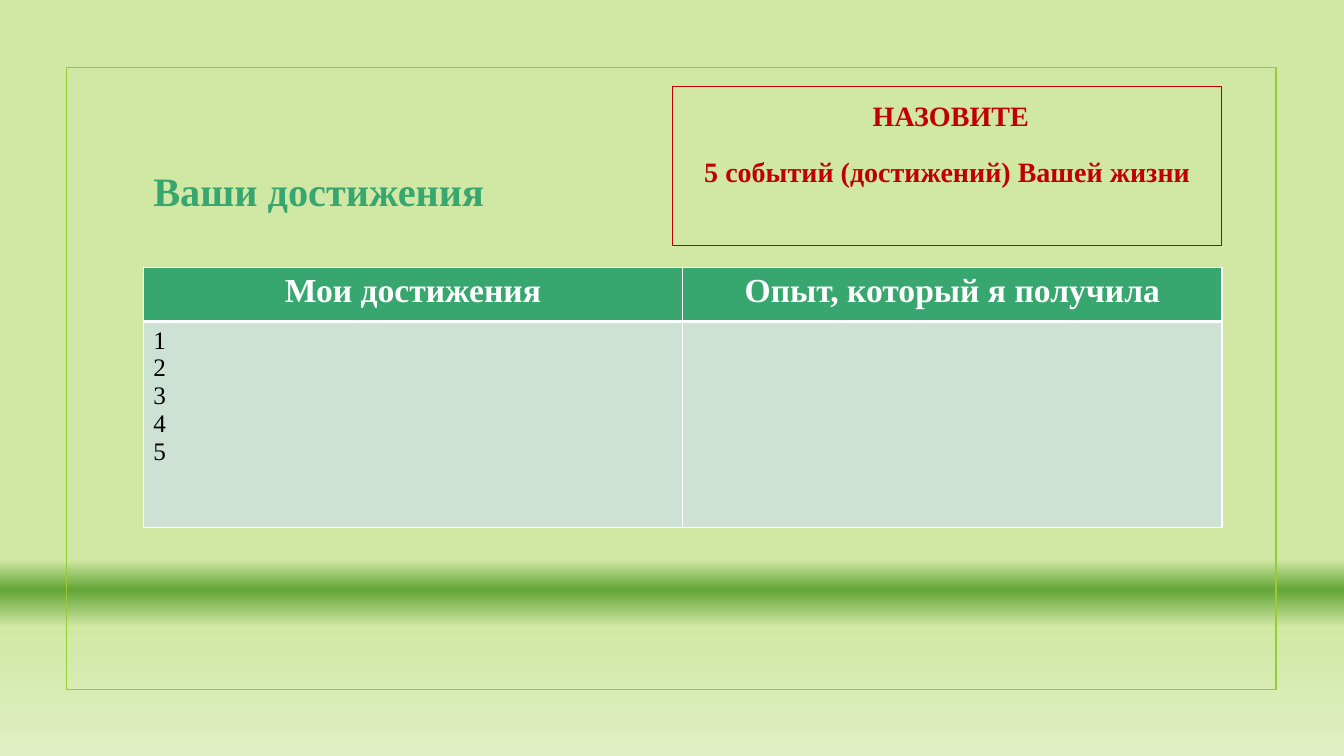
from lxml.etree import SubElement
from pptx import Presentation
from pptx.dml.color import RGBColor
from pptx.enum.shapes import MSO_SHAPE as Shape
from pptx.enum.text import MSO_ANCHOR as Anchor, MSO_AUTO_SIZE as AutoSize, PP_ALIGN as Align
from pptx.oxml.ns import qn
from pptx.util import Inches, Pt

COLORS = {
    "meadow": "D1E8A5",
    "horizon": "63A537",
    "pale": "E0EFC3",
    "frame": "99CB38",
    "green": "37A76F",
    "mint": "CEE1D5",
    "red": "C00000",
    "white": "FFFFFF",
    "black": "000000",
}
FONT = "Times New Roman"
BACKGROUND_STOPS = [(74, "meadow"), (78, "horizon"), (83, "meadow"), (100, "pale")]
HEADERS = ["Мои достижения", "Опыт, который я получила"]
NUMBERS = ["1", "2", "3", "4", "5"]


def color(name):
    return RGBColor.from_string(COLORS[name])


def add_solid_fill(parent, name):
    fill = SubElement(parent, qn("a:solidFill"))
    SubElement(fill, qn("a:srgbClr"), val=COLORS[name])


def paint_background(page):
    fill = page.background.fill
    fill.gradient()
    fill.gradient_angle = 270
    stops = page.element.find(".//" + qn("a:gsLst"))
    for stop in list(stops):
        stops.remove(stop)
    for percent, name in BACKGROUND_STOPS:
        stop = SubElement(stops, qn("a:gs"), pos=str(percent * 1000))
        SubElement(stop, qn("a:srgbClr"), val=COLORS[name])


def write_lines(frame, lines, size, name, bold=True, align=Align.LEFT):
    for index, line in enumerate(lines):
        para = frame.paragraphs[0] if index == 0 else frame.add_paragraph()
        para.text = line
        para.alignment = align
        para.font.name = FONT
        para.font.size = Pt(size)
        para.font.bold = bold
        para.font.color.rgb = color(name)


def add_outline(page, left, top, width, height, name, weight):
    box = page.shapes.add_shape(
        Shape.RECTANGLE, Inches(left), Inches(top), Inches(width), Inches(height)
    )
    box.shadow.inherit = False
    box.fill.background()
    box.line.color.rgb = color(name)
    box.line.width = Pt(weight)
    return box


def place_title(page, text):
    title = page.shapes.title
    title.left, title.top = Inches(1.42), Inches(1.56)
    title.width, title.height = Inches(4.91), Inches(0.62)
    frame = title.text_frame
    frame.auto_size = AutoSize.NONE
    frame.vertical_anchor = Anchor.BOTTOM
    write_lines(frame, [text], 28.8, "green")


def add_task(page, lines):
    box = add_outline(page, 6.67, 0.86, 5.45, 1.58, "red", 0.75)
    frame = box.text_frame
    frame.word_wrap = True
    frame.vertical_anchor = Anchor.TOP
    write_lines(frame, lines, 20, "red", align=Align.CENTER)
    for para in frame.paragraphs:
        para.line_spacing = 1.2
        para.space_after = Pt(6)
    for para in frame.paragraphs[1:]:
        para.space_before = Pt(5.5)


def style_cell(cell, fill_name, top, bottom):
    properties = cell._tc.get_or_add_tcPr()
    for side, weight in (("L", 1), ("R", 1), ("T", top), ("B", bottom)):
        line = SubElement(properties, qn("a:ln" + side), w=str(Pt(weight)))
        add_solid_fill(line, "white")
    cell.fill.solid()
    cell.fill.fore_color.rgb = color(fill_name)


def add_achievements(page):
    table = page.shapes.add_table(
        2, 2, Inches(1.42), Inches(2.65), Inches(10.7), Inches(2.58)
    ).table
    table.horz_banding = False
    table.rows[0].height = Inches(0.54)
    table.rows[1].height = Inches(2.04)
    for column, header in enumerate(HEADERS):
        head, body = table.cell(0, column), table.cell(1, column)
        style_cell(head, "green", 1, 3)
        style_cell(body, "mint", 3, 1)
        write_lines(head.text_frame, [header], 24, "white", align=Align.CENTER)
    write_lines(table.cell(1, 0).text_frame, NUMBERS, 18, "black", bold=False)


def main():
    deck = Presentation()
    deck.slide_width, deck.slide_height = Inches(13.33), Inches(7.5)
    page = deck.slides.add_slide(deck.slide_layouts[5])
    paint_background(page)
    add_outline(page, 0.66, 0.67, 12, 6.17, "frame", 1.25)
    place_title(page, "Ваши достижения")
    add_task(page, [" НАЗОВИТЕ", "5 событий (достижений) Вашей жизни"])
    add_achievements(page)
    deck.save("out.pptx")


if __name__ == "__main__":
    main()
